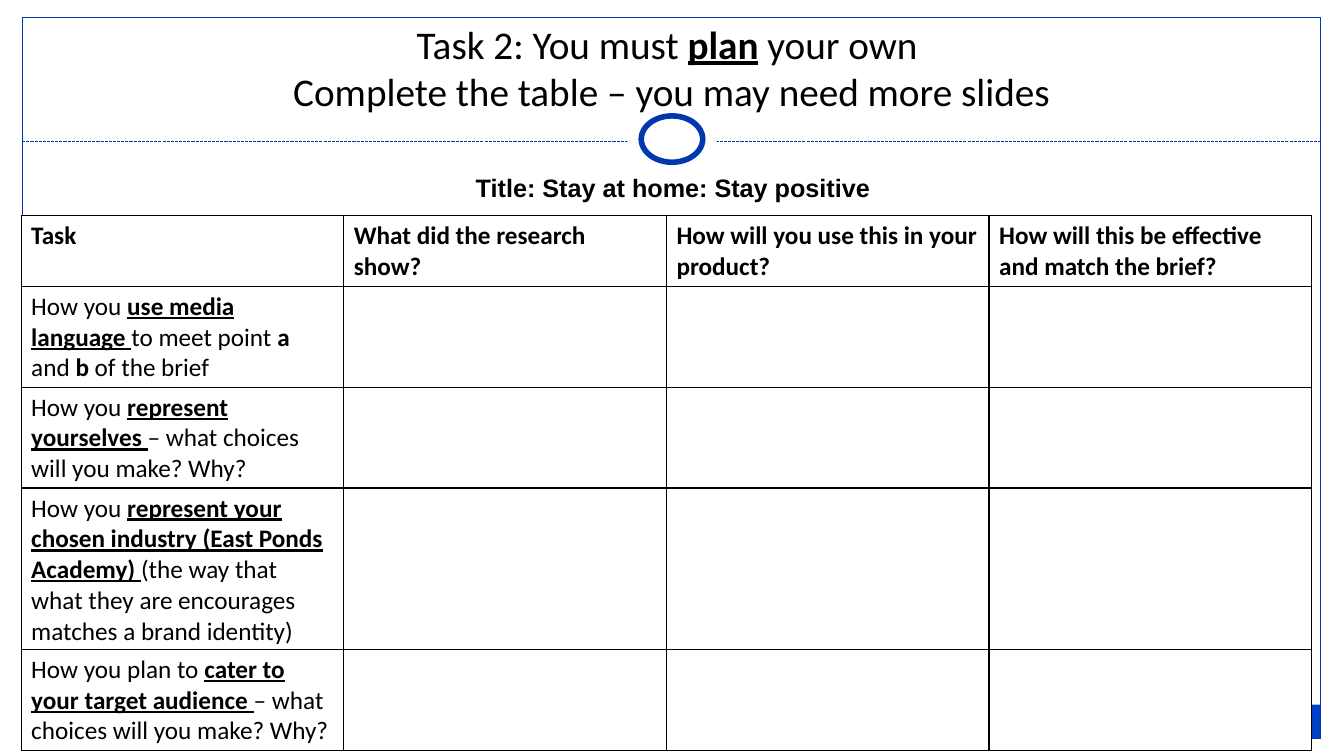
"""Build the Task 2 planning slide with its research table."""
from lxml import etree
from pptx import Presentation, util as u
from pptx.dml.color import RGBColor
from pptx.enum import dml, shapes, text
from pptx.oxml import ns

WHITE = RGBColor(0xFF, 0xFF, 0xFF)
BLACK = RGBColor(0, 0, 0)
BAND_BLUE = RGBColor(0x00, 0x42, 0xC7)
LINE_BLUE = RGBColor(0x00, 0x39, 0xAE)

HEADINGS = ["Task", "What did the research show?", "How will you use this in your product?",
            "How will this be effective and match the brief?"]
TASKS = [
    [("How you ", ""), ("use media language ", "bu"), ("to meet point ", ""), ("a", "b"),
     (" and ", ""), ("b", "b"), (" of the brief", "")],
    [("How you ", ""), ("represent yourselves ", "bu"),
     ("– what choices will you make? Why?", "")],
    [("How you ", ""), ("represent your chosen industry (East Ponds Academy) ", "bu"),
     ("(the way that what they are encourages matches a brand identity)", "")],
    [("How you plan to ", ""), ("cater to your target audience ", "bu"),
     ("– what choices will you make? Why?", "")],
]
ROW_HEIGHTS = [0.66, 0.86, 0.86, 1.44, 0.86]

presentation = Presentation()
presentation.slide_width = u.Inches(13.33)
presentation.slide_height = u.Inches(7.5)
slide = presentation.slides.add_slide(presentation.slide_layouts[6])


def add_panel(kind, box, fill=None, line_width=0):
    shape = slide.shapes.add_shape(kind, *[u.Inches(length) for length in box])
    shape.shadow.inherit = False
    if fill is None:
        shape.fill.background()
    else:
        shape.fill.solid()
        shape.fill.fore_color.rgb = fill
    if line_width:
        shape.line.color.rgb = LINE_BLUE
        shape.line.width = u.Pt(line_width)
    else:
        shape.line.fill.background()


def write_runs(paragraph, parts, size, font_name):
    paragraph.font.size = u.Pt(size)
    paragraph.font.name = font_name
    paragraph.font.color.rgb = BLACK
    for wording, style in parts:
        if wording == "\n":
            paragraph.add_line_break()
            continue
        run = paragraph.add_run()
        run.text = wording
        run.font.size = u.Pt(size)
        run.font.name = font_name
        run.font.color.rgb = BLACK
        run.font.bold = "b" in style
        run.font.underline = "u" in style


RECTANGLE, OVAL = shapes.MSO_SHAPE.RECTANGLE, shapes.MSO_SHAPE.OVAL
add_panel(RECTANGLE, (0.22, 6.99, 12.88, 0.34), fill=BAND_BLUE)
add_panel(RECTANGLE, (0.22, 0.17, 12.88, 7.16), line_width=0.75)

divider = slide.shapes.add_connector(shapes.MSO_CONNECTOR.STRAIGHT, u.Inches(0.22),
                                     u.Inches(1.4), u.Inches(13.1), u.Inches(1.4))
divider.line.color.rgb = LINE_BLUE
divider.line.width = u.Pt(0.75)
divider.line.dash_style = dml.MSO_LINE.SQUARE_DOT
etree.SubElement(divider._element.spPr, ns.qn("a:effectLst"))

add_panel(OVAL, (6.22, 1.05, 0.89, 0.67), fill=WHITE)
add_panel(OVAL, (6.36, 1.15, 0.61, 0.46), fill=WHITE, line_width=4)

TEXT_BOXES = [
    ((0.44, 0.35, 12.44, 0.83), text.MSO_ANCHOR.BOTTOM, 28, "Calibri",
     [("Task 2: You must ", ""), ("plan", "bu"), (" your own ", ""), ("\n", ""),
      ("Complete the table – you may need more slides", "")]),
    ((0.34, 1.66, 12.67, 0.4), text.MSO_ANCHOR.TOP, 18, "Arial",
     [("Title: Stay at home: Stay positive", "b")]),
]
for box, anchor, size, font_name, parts in TEXT_BOXES:
    frame = slide.shapes.add_textbox(*[u.Inches(length) for length in box]).text_frame
    frame.word_wrap = True
    frame.vertical_anchor = anchor
    frame.paragraphs[0].alignment = text.PP_ALIGN.CENTER
    write_runs(frame.paragraphs[0], parts, size, font_name)

table = slide.shapes.add_table(len(ROW_HEIGHTS), len(HEADINGS), u.Inches(0.21), u.Inches(2.14),
                               u.Inches(12.8), u.Inches(sum(ROW_HEIGHTS))).table
table.first_row = False
table.horz_banding = False
for row, height in zip(table.rows, ROW_HEIGHTS):
    row.height = u.Inches(height)
for column in table.columns:
    column.width = u.Inches(3.2)

for cell in table.iter_cells():
    properties = cell._tc.get_or_add_tcPr()
    for side in ("lnL", "lnR", "lnT", "lnB"):
        border = etree.SubElement(properties, ns.qn(f"a:{side}"), w=str(u.Pt(1)))
        border_fill = etree.SubElement(border, ns.qn("a:solidFill"))
        etree.SubElement(border_fill, ns.qn("a:srgbClr"), val=str(BLACK))
    cell.fill.solid()
    cell.fill.fore_color.rgb = WHITE
    cell.text_frame.paragraphs[0].font.size = u.Pt(18)

for column_index, heading in enumerate(HEADINGS):
    paragraph = table.cell(0, column_index).text_frame.paragraphs[0]
    write_runs(paragraph, [(heading, "b")], 18, "Calibri")
for row_index, parts in enumerate(TASKS, start=1):
    write_runs(table.cell(row_index, 0).text_frame.paragraphs[0], parts, 18, "Calibri")

presentation.save("out.pptx")
